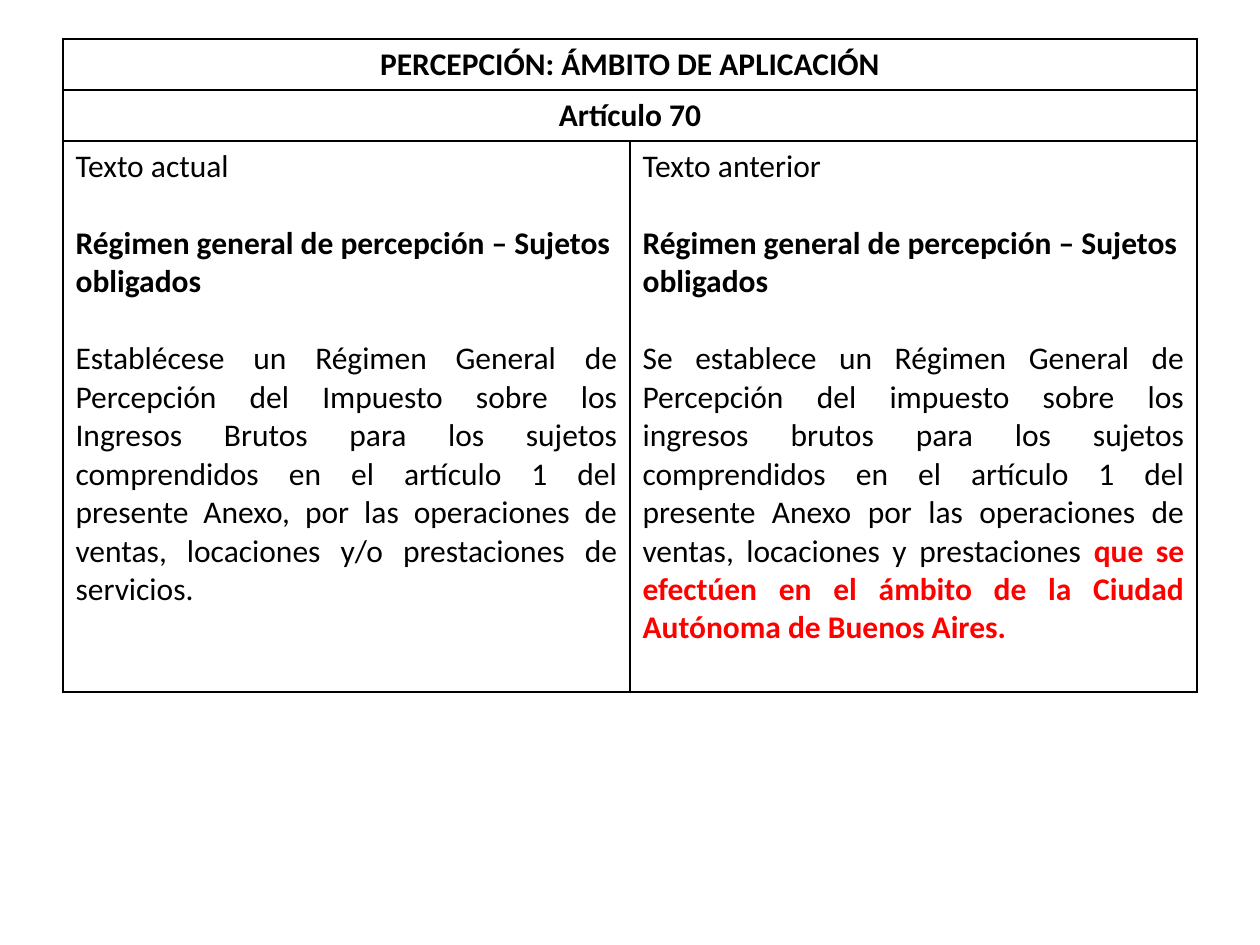
from lxml.etree import SubElement
from pptx import Presentation
from pptx.dml.color import RGBColor
from pptx.enum.text import PP_ALIGN as Align
from pptx.oxml.ns import qn
from pptx.util import Inches, Pt

BLACK = RGBColor(0, 0, 0)
RED = RGBColor(255, 0, 0)
LINE_GAP = Pt(22)
HEADINGS = ["PERCEPCIÓN: ÁMBITO DE APLICACIÓN", "Artículo 70"]
SUBTITLE = "Régimen general de percepción – Sujetos obligados"
VERSIONS = [
    ("Texto actual",
     "Establécese un Régimen General de Percepción del Impuesto sobre los "
     "Ingresos Brutos para los sujetos comprendidos en el artículo 1 del "
     "presente Anexo, por las operaciones de ventas, locaciones y/o "
     "prestaciones de servicios.",
     ""),
    ("Texto anterior",
     "Se establece un Régimen General de Percepción del impuesto sobre los "
     "ingresos brutos para los sujetos comprendidos en el artículo 1 del "
     "presente Anexo por las operaciones de ventas, locaciones y prestaciones ",
     "que se efectúen en el ámbito de la Ciudad Autónoma de Buenos Aires."),
]


def style_cell(cell):
    cell.fill.background()
    properties = cell._tc.get_or_add_tcPr()
    for position, side in enumerate(("lnL", "lnR", "lnT", "lnB")):
        line = SubElement(properties, qn(f"a:{side}"), w=str(Pt(1)))
        fill = SubElement(line, qn("a:solidFill"))
        SubElement(fill, qn("a:srgbClr"), val=str(BLACK))
        properties.insert(position, line)


def write_paragraph(para, text, align=Align.LEFT, bold=False, gap=None):
    para.alignment = align
    para.space_before = gap
    font = para.font
    font.name, font.size, font.bold = "Calibri", Pt(18), bold
    font.color.rgb = BLACK
    para.add_run().text = text


def write_version(cell, label, body, removed):
    frame = cell.text_frame
    write_paragraph(frame.paragraphs[0], label)
    write_paragraph(frame.add_paragraph(), SUBTITLE, bold=True, gap=LINE_GAP)
    para = frame.add_paragraph()
    write_paragraph(para, body, Align.JUSTIFY, gap=LINE_GAP)
    if removed:
        span = para.add_run()
        span.text = removed
        span.font.bold = True
        span.font.color.rgb = RED


def add_comparison(page, left, top, width, row_heights):
    table = page.shapes.add_table(
        len(row_heights), len(VERSIONS), left, top, width, sum(row_heights)).table
    table.first_row = table.horz_banding = False
    for row, height in zip(table.rows, row_heights):
        row.height = height
    for cell in table.iter_cells():
        style_cell(cell)
    for index, heading in enumerate(HEADINGS):
        cell = table.cell(index, 0)
        cell.merge(table.cell(index, len(VERSIONS) - 1))
        write_paragraph(cell.text_frame.paragraphs[0], heading, Align.CENTER, True)
    for column, version in enumerate(VERSIONS):
        write_version(table.cell(len(HEADINGS), column), *version)


def main():
    deck = Presentation()
    deck.slide_width, deck.slide_height = Inches(10), Inches(7.5)
    page = deck.slides.add_slide(deck.slide_layouts[6])
    add_comparison(page, Inches(0.5), Inches(0.31), Inches(9),
                   [Inches(0.4), Inches(0.4), Inches(4.37)])
    deck.save("out.pptx")


if __name__ == "__main__":
    main()
